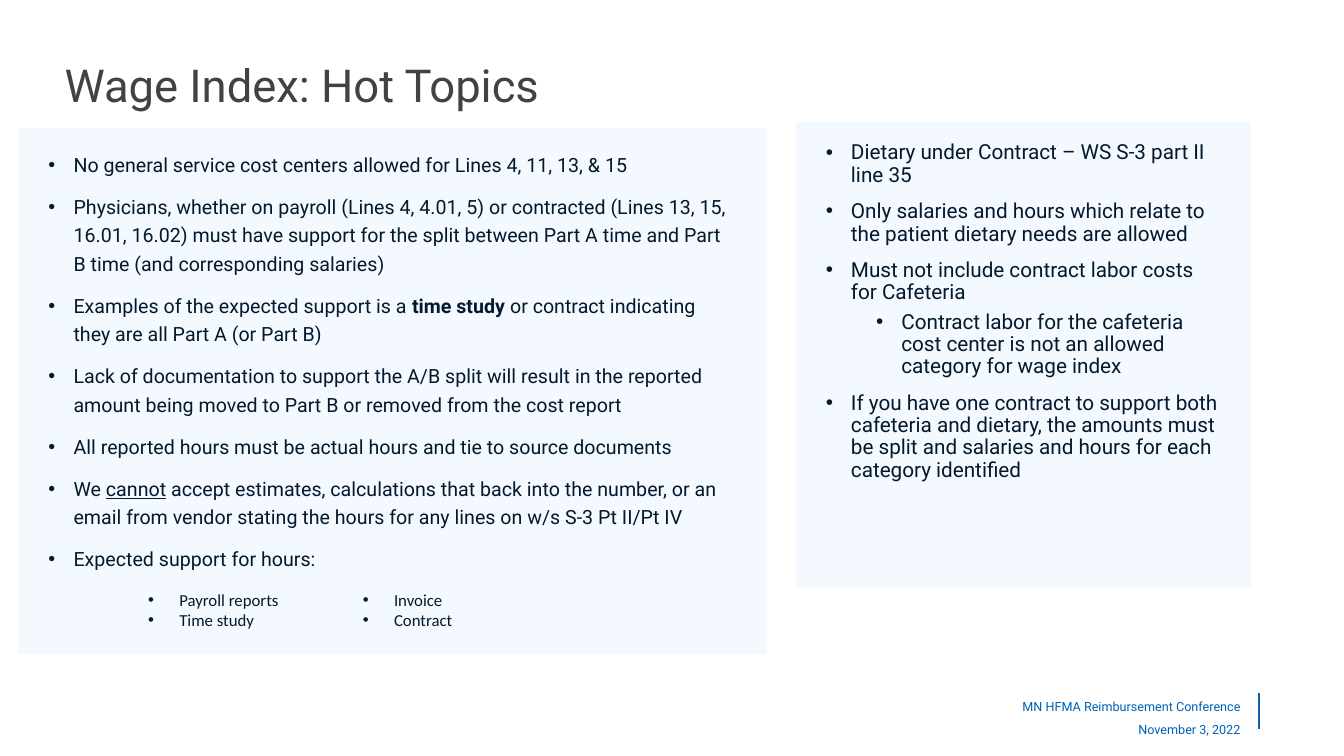
import pptx
import pptx.util
import pptx.dml.color
import pptx.enum.shapes
import pptx.enum.text
import pptx.oxml.ns
from dataclasses import dataclass
from lxml import etree

Inches, Pt = pptx.util.Inches, pptx.util.Pt
RGB = pptx.dml.color.RGBColor.from_string
ALIGN = pptx.enum.text.PP_ALIGN
ANCHOR = pptx.enum.text.MSO_ANCHOR
AUTO = pptx.enum.text.MSO_AUTO_SIZE
qn = pptx.oxml.ns.qn


@dataclass(frozen=True)
class Theme:
    head_font: str = "Roboto"
    list_font: str = "Calibri"
    title: str = "424242"
    body: str = "04192B"
    panel: str = "F3F9FF"
    footer: str = "0061B4"
    rule: str = "125FB1"
    title_size: float = 32.4
    left_size: float = 14
    right_size: float = 14.8
    list_size: float = 12
    footer_size: float = 9


class Deck:
    def __init__(self, prs, theme):
        self.theme = theme
        self.s = prs.slides.add_slide(prs.slide_layouts[5])

    def run(self, p, text, size, color, font, bold=False, underline=False):
        r = p.add_run()
        r.text = text
        r.font.size, r.font.name = Pt(size), font
        r.font.color.rgb = RGB(color)
        r.font.bold, r.font.underline = bold, underline

    def bullet(self, p, left, hang):
        pPr = p._p.get_or_add_pPr()
        pPr.set("marL", str(Inches(left)))
        pPr.set("indent", str(-Inches(hang)))
        etree.SubElement(pPr, qn("a:buFont")).set("typeface", "Arial")
        etree.SubElement(pPr, qn("a:buChar")).set("char", "•")

    def paragraphs(self, tf, items):
        for i, item in enumerate(items):
            yield i, (tf.add_paragraph() if i else tf.paragraphs[0]), item

    def title(self, text, box):
        sp, t = self.s.shapes.title, self.theme
        sp.left, sp.top, sp.width, sp.height = map(Inches, box)
        tf = sp.text_frame
        tf.auto_size, tf.vertical_anchor = AUTO.NONE, ANCHOR.MIDDLE
        p = tf.paragraphs[0]
        p.alignment, p.line_spacing = ALIGN.LEFT, Pt(39)
        self.run(p, text, t.title_size, t.title, t.head_font)

    def panel(self, box, items, size, spacing):
        """Each item is (level, runs); each run is (text, style)."""
        t = self.theme
        sp = self.s.shapes.add_shape(
            pptx.enum.shapes.MSO_SHAPE.RECTANGLE, *map(Inches, box))
        sp.shadow.inherit = False
        sp.fill.solid()
        sp.fill.fore_color.rgb = RGB(t.panel)
        sp.line.fill.background()
        tf = sp.text_frame
        tf.word_wrap, tf.vertical_anchor = True, ANCHOR.TOP
        tf.margin_left = tf.margin_right = Inches(0.3)
        tf.margin_top = tf.margin_bottom = Inches(0.2)
        for i, p, (level, runs) in self.paragraphs(tf, items):
            self.bullet(p, 0.25 + 0.5 * level, 0.25)
            p.level, p.alignment = level, ALIGN.LEFT
            p.line_spacing = spacing
            p.space_before = Pt((5 if level else 10) if i else 0)
            for text, style in runs:
                self.run(p, text, size, t.body, t.head_font, **style)

    def text_box(self, box):
        tf = self.s.shapes.add_textbox(*map(Inches, box)).text_frame
        tf.word_wrap, tf.auto_size = True, AUTO.SHAPE_TO_FIT_TEXT
        return tf

    def short_list(self, box, items):
        t = self.theme
        for _, p, text in self.paragraphs(self.text_box(box), items):
            self.bullet(p, 1.31, 0.31)
            p.level = 2
            self.run(p, text, t.list_size, t.body, t.list_font)

    def footer(self, box, lines):
        t = self.theme
        for _, p, text in self.paragraphs(self.text_box(box), lines):
            p.alignment, p.line_spacing = ALIGN.RIGHT, 1.5
            self.run(p, text, t.footer_size, t.footer, t.head_font)

    def rule(self, x, top, bottom):
        c = self.s.shapes.add_connector(
            pptx.enum.shapes.MSO_CONNECTOR.STRAIGHT,
            *map(Inches, (x, top, x, bottom)))
        c.line.color.rgb, c.line.width = RGB(self.theme.rule), Pt(1.25)
        etree.SubElement(c._element.spPr, qn("a:effectLst"))


def plain(text, level=0):
    return level, [(text, {})]


SUPPORT = [
    plain("No general service cost centers allowed for Lines 4, 11, 13, & 15"),
    plain("Physicians, whether on payroll (Lines 4, 4.01, 5) or contracted "
          "(Lines 13, 15, 16.01, 16.02) must have support for the split "
          "between Part A time and Part B time (and corresponding salaries)"),
    (0, [("Examples of the expected support is a ", {}),
         ("time study ", {"bold": True}),
         ("or contract indicating they are all Part A (or Part B)", {})]),
    plain("Lack of documentation to support the A/B split will result in the "
          "reported amount being moved to Part B or removed from the cost report"),
    plain("All reported hours must be actual hours and tie to source documents"),
    (0, [("We ", {}),
         ("cannot", {"underline": True}),
         (" accept estimates, calculations that back into the number, or an "
          "email from vendor stating the hours for any lines on w/s S-3 "
          "Pt II/Pt IV", {})]),
    plain("Expected support for hours:"),
]
DIETARY = [
    plain("Dietary under Contract – WS S-3 part II line 35"),
    plain("Only salaries and hours which relate to the patient dietary needs "
          "are allowed"),
    plain("Must not include contract labor costs for Cafeteria"),
    plain("Contract labor for the cafeteria cost center is not an allowed "
          "category for wage index", level=1),
    plain("If you have one contract to support both cafeteria and dietary, the "
          "amounts must be split and salaries and hours for each category "
          "identified"),
]


def main():
    prs = pptx.Presentation()
    prs.slide_width, prs.slide_height = Inches(13.33), Inches(7.5)
    theme = Theme()
    deck = Deck(prs, theme)

    # Footer
    deck.rule(12.49, 6.88, 7.23)
    deck.footer((8.14, 6.81, 4.26, 0.54),
                ["MN HFMA Reimbursement Conference", "November 3, 2022"])

    # Title and panels
    deck.title("Wage Index: Hot Topics", (0.54, 0.57, 12.26, 0.53))
    deck.panel((0.18, 1.27, 7.43, 5.22), SUPPORT, theme.left_size, 1.2)
    deck.panel((7.89, 1.21, 4.52, 4.63), DIETARY, theme.right_size, 0.9)

    # Kinds of support for hours
    deck.short_list((0.37, 5.8, 2.84, 0.5), ["Payroll reports", "Time study"])
    deck.short_list((2.5, 5.8, 2.44, 0.5), ["Invoice", "Contract"])

    prs.save("out.pptx")


if __name__ == "__main__":
    main()
